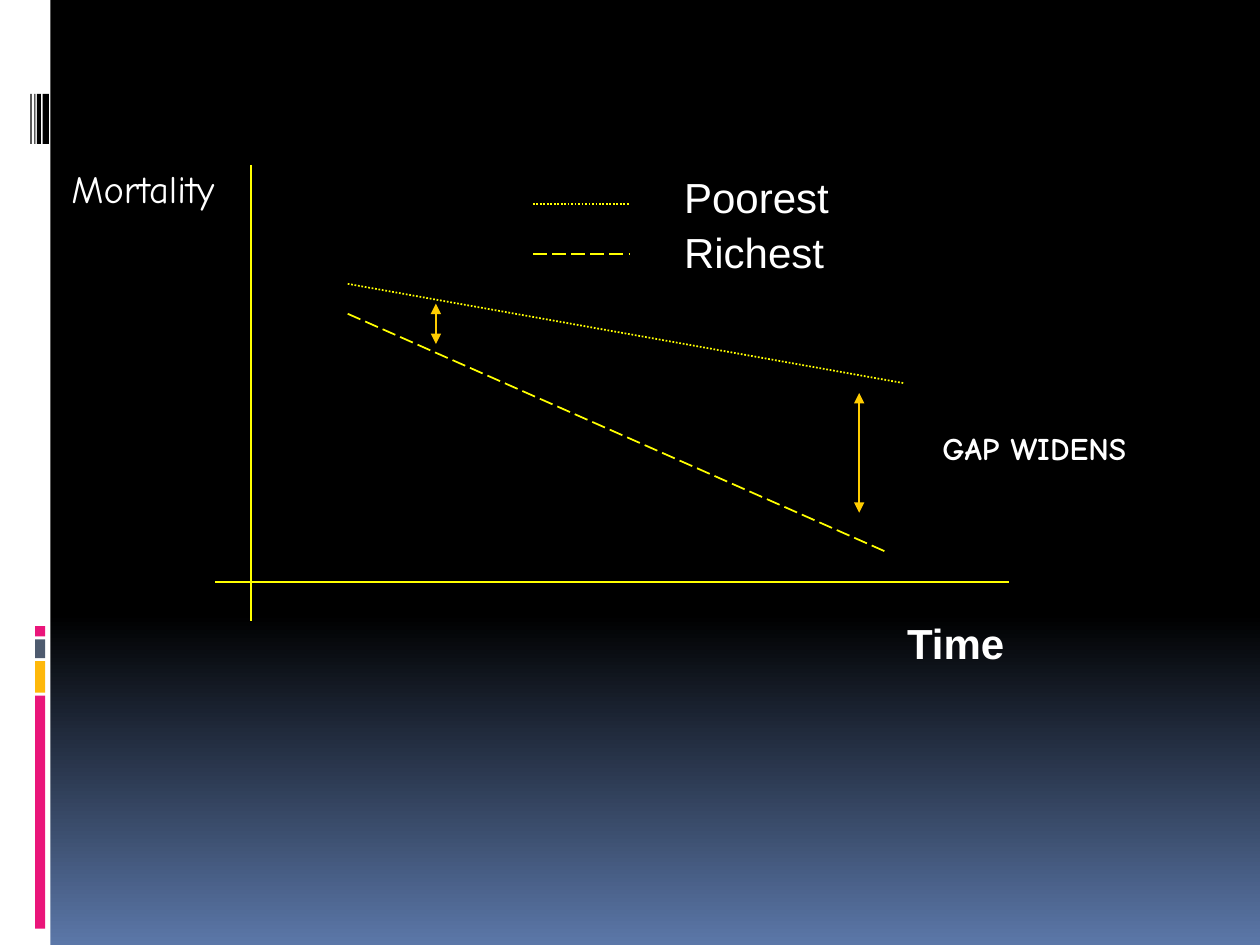
from copy import deepcopy
from dataclasses import dataclass

from lxml.etree import SubElement
from pptx import Presentation
from pptx.dml.color import RGBColor
from pptx.enum.dml import MSO_LINE
from pptx.enum.shapes import MSO_CONNECTOR, MSO_SHAPE
from pptx.enum.text import MSO_AUTO_SIZE, PP_ALIGN
from pptx.oxml.ns import qn
from pptx.util import Pt


@dataclass(frozen=True)
class Theme:
    black: str = "000000"
    white: str = "FFFFFF"
    blue: str = "5B77A8"
    pink: str = "EA157A"
    amber: str = "FEB80A"
    slate: str = "4E5B6F"
    yellow: str = "FFFF00"
    gold: str = "FFCC00"
    plain: str = "Arial"
    hand: str = "Comic Neue"
    large: int = 24
    medium: int = 22
    small: int = 18


THEME = Theme()
DOT, DASH = MSO_LINE.ROUND_DOT, MSO_LINE.LONG_DASH


def color(code):
    return RGBColor.from_string(code)


def style(item, values):
    for name, value in values.items():
        setattr(item, name, value)


def paint_back(slide):
    """Fade from black to blue over the lower third."""
    fill = slide.background.fill
    fill.gradient()
    fill.gradient_angle = 270
    stops = slide.element.find(".//" + qn("a:gsLst"))
    stops.insert(1, deepcopy(stops[0]))
    shades = ((0, THEME.black), (0.65, THEME.black), (1, THEME.blue))
    for stop, (place, code) in zip(fill.gradient_stops, shades):
        stop.position = place
        stop.color.rgb = color(code)


def add_block(slide, left, top, width, height, code):
    block = slide.shapes.add_shape(
        MSO_SHAPE.RECTANGLE, Pt(left), Pt(top), Pt(width), Pt(height))
    block.shadow.inherit = False
    block.fill.solid()
    block.fill.fore_color.rgb = color(code)
    block.line.fill.background()


def add_line(slide, start, end, code=THEME.yellow, dash=None, heads=False):
    line = slide.shapes.add_connector(
        MSO_CONNECTOR.STRAIGHT, *map(Pt, start + end))
    line.line.color.rgb = color(code)
    style(line.line, {"width": Pt(1), "dash_style": dash})
    if heads:
        pen = line.line._get_or_add_ln()
        for tag in ("a:headEnd", "a:tailEnd"):
            SubElement(pen, qn(tag), type="triangle")
    SubElement(line.element.spPr, qn("a:effectLst"))


def add_label(slide, text, left, top, width, height, **format):
    box = slide.shapes.add_textbox(Pt(left), Pt(top), Pt(width), Pt(height))
    frame = box.text_frame
    style(frame, {"word_wrap": False,
                  "auto_size": MSO_AUTO_SIZE.SHAPE_TO_FIT_TEXT})
    line = frame.paragraphs[0]
    line.alignment = PP_ALIGN.LEFT
    run = line.add_run()
    run.text = text
    base = {"name": THEME.plain, "size": Pt(THEME.large), "bold": False}
    style(run.font, base | format)
    run.font.color.rgb = color(THEME.white)


def add_edge(slide):
    """White side band with its stacked bars and stripes."""
    add_block(slide, 0, 0, 28.8, 540, THEME.white)
    top = 357.8
    for height, code in ((5.8, THEME.pink), (10.8, THEME.slate),
                         (18, THEME.amber), (133.2, THEME.pink)):
        add_block(slide, 20, top, 5.8, height, code)
        top += height + 1.7
    for left, width in ((17.4, 0.7), (19.6, 0.7), (21.1, 2.3), (24.4, 3.6)):
        add_block(slide, left, 53.6, width, 28.7, THEME.black)


def add_graph(slide):
    # Axes
    add_line(slide, (143.3, 94.3), (143.3, 355))
    add_line(slide, (123.1, 332.5), (576.7, 332.5))
    # Trends
    add_line(slide, (198.7, 162.2), (516.2, 218.9), dash=DOT)
    add_line(slide, (198.7, 179.3), (506, 315.2), dash=DASH)
    # Gaps between the trends
    for x, top, base in ((491, 224.6, 293), (249.1, 173.5, 196.6)):
        add_line(slide, (x, top), (x, base), THEME.gold, heads=True)


def add_key(slide):
    for text, y, top, dash in (("Poorest", 116.7, 94.3, DOT),
                               ("Richest", 145.3, 126, DASH)):
        add_line(slide, (304.6, y), (360, y), dash=dash)
        add_label(slide, text, 383.8, top, 98, 36.7)


def add_names(slide):
    add_label(slide, "GAP WIDENS", 531.4, 241.9, 138.2, 28.8,
              name=THEME.hand, size=Pt(THEME.small), bold=True)
    add_label(slide, "Mortality", 33.8, 90.7, 113, 33.8,
              name=THEME.hand, size=Pt(THEME.medium))
    add_label(slide, "Time", 511.2, 349.2, 70.6, 36.7, bold=True)


def main():
    deck = Presentation()
    style(deck, {"slide_width": Pt(720), "slide_height": Pt(540)})
    slide = deck.slides.add_slide(deck.slide_layouts[6])
    paint_back(slide)
    add_edge(slide)
    add_graph(slide)
    add_key(slide)
    add_names(slide)
    deck.save("out.pptx")


if __name__ == "__main__":
    main()
